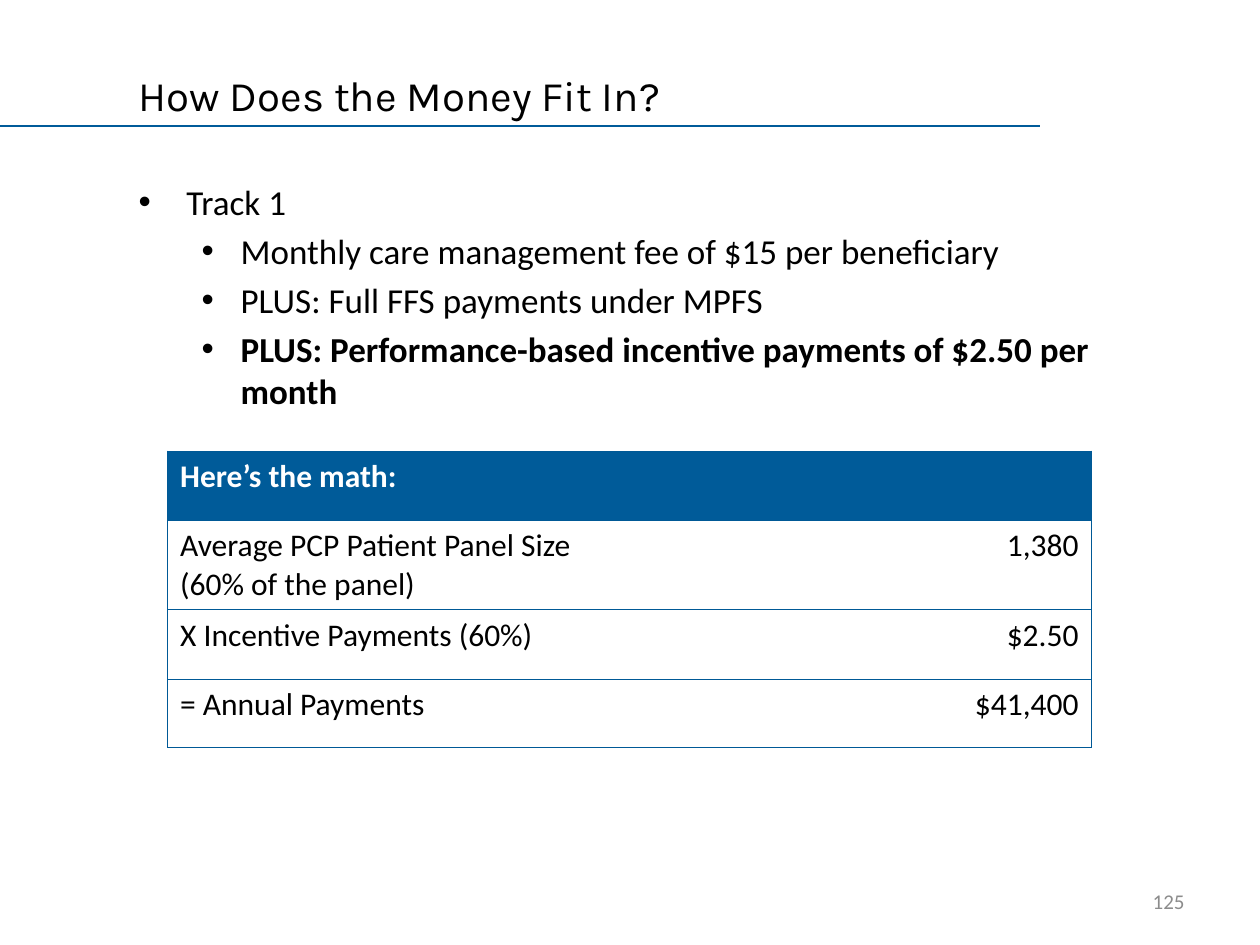
from dataclasses import dataclass

from lxml import etree
from pptx import Presentation
from pptx import util as u
from pptx.dml.color import RGBColor
from pptx.enum import shapes, text
from pptx.oxml import ns


@dataclass(frozen=True)
class Theme:
    heading_font: str = "Karla"
    body_font: str = "Calibri"
    ink: str = "000000"
    paper: str = "FFFFFF"
    blue: str = "005B99"
    border: str = "005996"
    grey: str = "8C8C8C"
    title_size: int = 24
    body_size: int = 20
    table_size: int = 18
    number_size: int = 12
    line_width: float = 0.75


class SlideBuilder:
    def __init__(self, page, theme):
        self.page = page
        self.theme = theme

    def place(self, shape, left, top, width, height):
        shape.left, shape.top = u.Inches(left), u.Inches(top)
        shape.width, shape.height = u.Inches(width), u.Inches(height)

    def style(self, para, size, color=None, name=None, bold=False):
        for span in para.runs:
            font = span.font
            font.name = name or self.theme.body_font
            font.size = u.Pt(size)
            font.bold = bold
            font.color.rgb = RGBColor.from_string(color or self.theme.ink)

    def title(self, words, *area):
        shape = self.page.shapes.title
        self.place(shape, *area)
        frame = shape.text_frame
        frame.text = words
        frame.auto_size = text.MSO_AUTO_SIZE.NONE
        frame.vertical_anchor = text.MSO_ANCHOR.MIDDLE
        para = frame.paragraphs[0]
        para.alignment = text.PP_ALIGN.LEFT
        self.style(para, self.theme.title_size, name=self.theme.heading_font)

    def rule(self, left, top, right):
        line = self.page.shapes.add_connector(
            shapes.MSO_CONNECTOR.STRAIGHT,
            u.Inches(left), u.Inches(top), u.Inches(right), u.Inches(top))
        line.line.color.rgb = RGBColor.from_string(self.theme.blue)
        line.line.width = u.Pt(self.theme.line_width)
        etree.SubElement(line._element.spPr, ns.qn("a:effectLst"))

    def bullets(self, items, *area):
        shape = self.page.placeholders[1]
        self.place(shape, *area)
        frame = shape.text_frame
        frame.auto_size = text.MSO_AUTO_SIZE.NONE
        indents = [(0.38, -0.38), (0.81, -0.31)]
        for index, (level, words, bold) in enumerate(items):
            para = frame.add_paragraph() if index else frame.paragraphs[0]
            para.text = words
            para.level = level
            para.space_before = u.Pt(4 if index else 0)
            margin, hanging = indents[level]
            props = para._p.get_or_add_pPr()
            props.set("marL", str(u.Inches(margin)))
            props.set("indent", str(u.Inches(hanging)))
            etree.SubElement(props, ns.qn("a:buFont"), typeface="Arial")
            etree.SubElement(props, ns.qn("a:buChar"), char="•")
            self.style(para, self.theme.body_size, bold=bold)

    def cell_borders(self, cell, visible):
        props = cell._tc.get_or_add_tcPr()
        for side in "LRTB":
            line = etree.SubElement(props, ns.qn("a:ln" + side),
                                    w=str(u.Pt(self.theme.line_width)))
            if side in visible:
                fill = etree.SubElement(line, ns.qn("a:solidFill"))
                etree.SubElement(fill, ns.qn("a:srgbClr"), val=self.theme.border)
            else:
                etree.SubElement(line, ns.qn("a:noFill"))

    def table(self, rows, heights, *area):
        frame = self.page.shapes.add_table(
            len(rows), len(rows[0]), *(u.Inches(value) for value in area))
        table = frame.table
        table.horz_banding = False
        for row, height in zip(table.rows, heights):
            row.height = u.Inches(height)
        for r, values in enumerate(rows):
            header = r == 0
            for c, value in enumerate(values):
                cell = table.cell(r, c)
                # Outer frame and row lines only, none between the columns
                self.cell_borders(cell, "TB" + "LR"[c])
                cell.fill.solid()
                cell.fill.fore_color.rgb = RGBColor.from_string(
                    self.theme.blue if header else self.theme.paper)
                cell.text_frame.text = value
                para = cell.text_frame.paragraphs[0]
                para.alignment = text.PP_ALIGN.RIGHT if c else text.PP_ALIGN.LEFT
                self.style(para, self.theme.table_size, bold=header,
                           color=self.theme.paper if header else self.theme.ink)

    def page_number(self, words, *area):
        box = self.page.shapes.add_textbox(*(u.Inches(value) for value in area))
        frame = box.text_frame
        frame.word_wrap = True
        frame.vertical_anchor = text.MSO_ANCHOR.MIDDLE
        frame.text = words
        para = frame.paragraphs[0]
        para.alignment = text.PP_ALIGN.RIGHT
        self.style(para, self.theme.number_size, self.theme.grey)


def main():
    deck = Presentation()
    deck.slide_width, deck.slide_height = u.Inches(10), u.Inches(7.5)
    page = deck.slides.add_slide(deck.slide_layouts[1])
    builder = SlideBuilder(page, Theme())

    # Heading
    builder.rule(0, 1, 8.25)
    builder.title("How Does the Money Fit In?", 1, 0.5, 7, 0.5)

    # Payment components: level, wording, bold
    builder.bullets([
        (0, "Track 1", False),
        (1, "Monthly care management fee of $15 per beneficiary", False),
        (1, "PLUS: Full FFS payments under MPFS", False),
        (1, "PLUS: Performance-based incentive payments of $2.50 per month", True),
    ], 1, 1.38, 7.98, 4.95)

    # Calculation
    builder.table([
        ("Here’s the math:", ""),
        ("Average PCP Patient Panel Size (60% of the panel)", "1,380"),
        ("X Incentive Payments (60%)", "$2.50"),
        ("= Annual Payments", "$41,400"),
    ], (0.55, 0.55, 0.55, 0.54), 1.33, 3.58, 7.33, 2.33)

    # Footer
    builder.page_number("125", 7.17, 6.95, 2.33, 0.4)

    deck.save("out.pptx")


if __name__ == "__main__":
    main()
